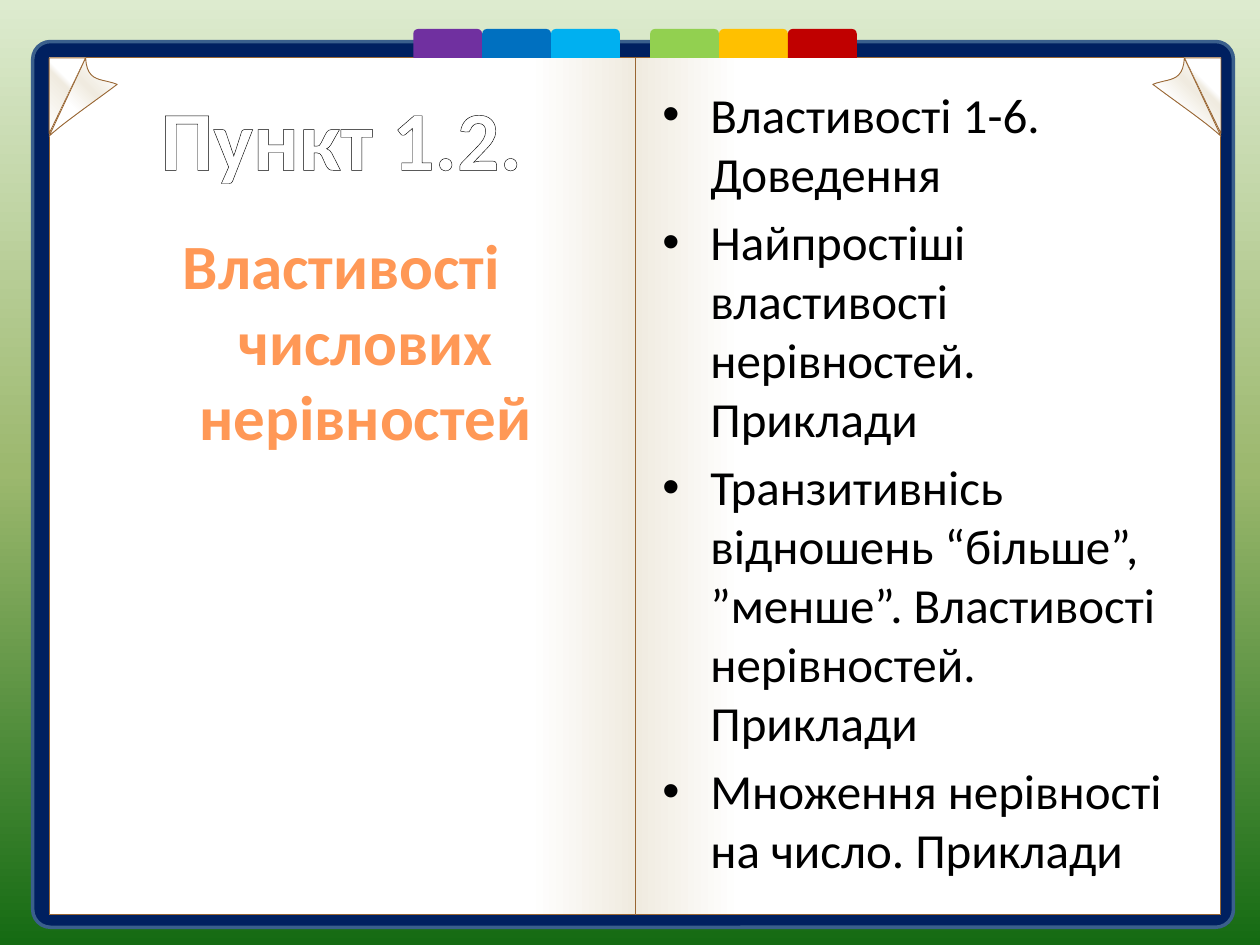
from lxml.etree import SubElement
from pptx import Presentation
from pptx.dml.color import RGBColor
from pptx.enum.shapes import MSO_SHAPE as SHAPE
from pptx.enum.text import MSO_ANCHOR as ANCHOR, MSO_AUTO_SIZE as AUTO_SIZE, PP_ALIGN as ALIGN
from pptx.oxml import parse_xml
from pptx.oxml.ns import nsdecls, qn
from pptx.util import Inches, Pt

WHITE = RGBColor(0xFF, 0xFF, 0xFF)
BLACK = RGBColor(0, 0, 0)
CREAM = RGBColor(0xF0, 0xEB, 0xE0)
BROWN = RGBColor(0x99, 0x66, 0x33)
NAVY = RGBColor(0x00, 0x20, 0x60)
COVER_EDGE = RGBColor(0x3A, 0x5F, 0x8C)
LEFT_TABS = [RGBColor(0x70, 0x30, 0xA0), RGBColor(0x00, 0x70, 0xC0), RGBColor(0x00, 0xB0, 0xF0)]
RIGHT_TABS = [RGBColor(0x92, 0xD0, 0x50), RGBColor(0xFF, 0xC0, 0x00), RGBColor(0xC0, 0x00, 0x00)]
MEADOW = [(0, RGBColor(0xDD, 0xEB, 0xCF)), (50, RGBColor(0x9C, 0xB8, 0x6E)),
          (100, RGBColor(0x15, 0x6B, 0x13))]
ORANGE = [(0, RGBColor(0x9D, 0x47, 0x00)), (78, RGBColor(0xFF, 0x98, 0x56)),
          (100, RGBColor(0xFF, 0xF5, 0xF1))]
PAGE = [(0, WHITE), (82, WHITE), (100, CREAM)]
UNDERSIDE = [(0, WHITE), (57, CREAM), (65, WHITE)]
FLAP = [(12, WHITE), (40, CREAM), (65, WHITE)]
FONT = "Calibri"

PAGE_TOP, PAGE_HEIGHT, PAGE_WIDTH = 0.46, 6.8, 4.65
PAGE_LEFT, SPINE = 0.39, 5.04
PAGE_RIGHT = SPINE + PAGE_WIDTH

TOPICS = [
    "Властивості 1-6. Доведення",
    "Найпростіші властивості нерівностей. Приклади",
    "Транзитивнісь відношень “більше”, ”менше”. Властивості нерівностей. Приклади",
    "Множення нерівності на число. Приклади",
]


def fill_gradient(fill, owner, stops, angle):
    """Fill with any number of stops; the angle runs clockwise."""
    fill.gradient()
    fill.gradient_angle = -angle % 360
    stop_list = owner.find(".//" + qn("a:gsLst"))
    for stop in list(stop_list):
        stop_list.remove(stop)
    for position, color in stops:
        stop = SubElement(stop_list, qn("a:gs"), pos=str(position * 1000))
        SubElement(stop, qn("a:srgbClr"), val=str(color))


def style_paper(paper, stops, angle):
    paper.shadow.inherit = False
    fill_gradient(paper.fill, paper.element, stops, angle)
    paper.line.color.rgb = BROWN
    paper.line.width = Pt(0.5)


def add_block(shapes, kind, left, top, width, height):
    block = shapes.add_shape(kind, Inches(left), Inches(top), Inches(width), Inches(height))
    block.shadow.inherit = False
    return block


def add_book(slide):
    book = slide.shapes.add_group_shape().shapes
    cover = add_block(book, SHAPE.ROUNDED_RECTANGLE, 0.26, 0.33, 9.53, 7.03)
    cover.adjustments[0] = 0.02
    cover.fill.solid()
    cover.fill.fore_color.rgb = NAVY
    cover.line.color.rgb = COVER_EDGE
    cover.line.width = Pt(2)
    for left, angle in ((PAGE_LEFT, 0), (SPINE, 180)):
        page = add_block(book, SHAPE.RECTANGLE, left, PAGE_TOP, PAGE_WIDTH, PAGE_HEIGHT)
        style_paper(page, PAGE, angle)


def curve(start, control_1, control_2, end, steps=12):
    """Points along a cubic curve, without its start."""
    points = []
    for step in range(1, steps + 1):
        t = step / steps
        weights = ((1 - t) ** 3, 3 * t * (1 - t) ** 2, 3 * t * t * (1 - t), t ** 3)
        points.append(tuple(
            sum(w * p[axis] for w, p in zip(weights, (start, control_1, control_2, end)))
            for axis in (0, 1)))
    return points


def add_corner(slide, edge, inward, points, stops, angle):
    """Outline given as distances inward from the page edge and down from its top."""
    outline = [(Inches(edge + inward * x), Inches(PAGE_TOP + y)) for x, y in points]
    builder = slide.shapes.build_freeform(*outline[0])
    builder.add_line_segments(outline[1:], close=True)
    style_paper(builder.convert_to_shape(), stops, angle)


def add_undersides(slide):
    for edge, inward in ((PAGE_RIGHT, -1), (PAGE_LEFT, 1)):
        add_corner(slide, edge, inward, [(0.29, 0), (0, 0.6), (0, 0)], UNDERSIDE, 315)


def add_flaps(slide):
    tip, foot, fold = (0.54, 0.21), (0, 0.62), (0.29, 0)
    points = [tip, *curve(tip, (0.34, 0.36), (0.12, 0.51), foot),
              fold, *curve(fold, (0.3, 0.2), (0.42, 0.16), tip)]
    for edge, inward in ((PAGE_RIGHT, -1), (PAGE_LEFT, 1)):
        add_corner(slide, edge, inward, points, FLAP, 135)


def add_tabs(slide, left, colors, total_width=1.64):
    width = total_width / len(colors)
    for index, color in enumerate(colors):
        tab = add_block(slide.shapes, SHAPE.ROUND_2_SAME_RECTANGLE,
                        left + index * width, 0.23, width, 0.23)
        tab.fill.solid()
        tab.fill.fore_color.rgb = color
        tab.line.fill.background()


def add_run(paragraph, text, size, bold=False):
    run = paragraph.add_run()
    run.text = text
    run.font.name = FONT
    run.font.size = Pt(size)
    run.font.bold = bold
    return run


def set_hanging(paragraph):
    properties = paragraph._p.get_or_add_pPr()
    properties.set("marL", str(Inches(0.38)))
    properties.set("indent", str(-Inches(0.38)))
    return properties


def place_title(slide, left, top, width, height):
    title = slide.shapes.title
    title.left, title.top = Inches(left), Inches(top)
    title.width, title.height = Inches(width), Inches(height)
    title.element.getparent().append(title.element)  # in front of the pages
    frame = title.text_frame
    frame.auto_size = AUTO_SIZE.NONE
    frame.vertical_anchor = ANCHOR.MIDDLE
    paragraph = frame.paragraphs[0]
    paragraph.alignment = ALIGN.CENTER
    run = add_run(paragraph, "Пункт 1.2.", 48, bold=True)
    run.font.color.rgb = WHITE
    outline = parse_xml(f'<a:ln {nsdecls("a")} w="{Pt(0.75)}"><a:solidFill>'
                        f'<a:srgbClr val="{BLACK}"/></a:solidFill></a:ln>')
    run.font._element.insert(0, outline)


def add_text(slide, left, top, width, height):
    box = slide.shapes.add_textbox(Inches(left), Inches(top), Inches(width), Inches(height))
    box.text_frame.word_wrap = True
    return box


def add_topics(slide, left, top, width, height):
    frame = add_text(slide, left, top, width, height).text_frame
    for index, topic in enumerate(TOPICS):
        paragraph = frame.add_paragraph() if index else frame.paragraphs[0]
        properties = set_hanging(paragraph)
        if index:
            paragraph.space_before = Pt(5.6)
        SubElement(properties, qn("a:buFont"), typeface="Arial")
        SubElement(properties, qn("a:buChar"), char="•")
        add_run(paragraph, topic, 28).font.color.rgb = BLACK


def add_subject(slide, left, top, width, height):
    box = add_text(slide, left, top, width, height)
    paragraph = box.text_frame.paragraphs[0]
    set_hanging(paragraph)
    paragraph.alignment = ALIGN.CENTER
    run = add_run(paragraph, "Властивості числових нерівностей", 36, bold=True)
    fill_gradient(run.font.fill, box.element, ORANGE, 90)


def main():
    presentation = Presentation()
    presentation.slide_width, presentation.slide_height = Inches(10), Inches(7.5)
    slide = presentation.slides.add_slide(presentation.slide_layouts[5])
    fill_gradient(slide.background.fill, slide.element, MEADOW, 90)

    # Open book
    add_book(slide)
    add_undersides(slide)

    # Title and right page
    place_title(slide, 0.5, 0.62, 4.42, 0.93)
    add_topics(slide, 5.16, 0.62, 4.34, 6.41)

    # Bookmarks
    add_tabs(slide, 3.28, LEFT_TABS)
    add_tabs(slide, 5.16, RIGHT_TABS)

    # Left page and folded corners
    add_subject(slide, 0.5, 1.75, 4.42, 5.28)
    add_flaps(slide)
    presentation.save("out.pptx")


if __name__ == "__main__":
    main()
